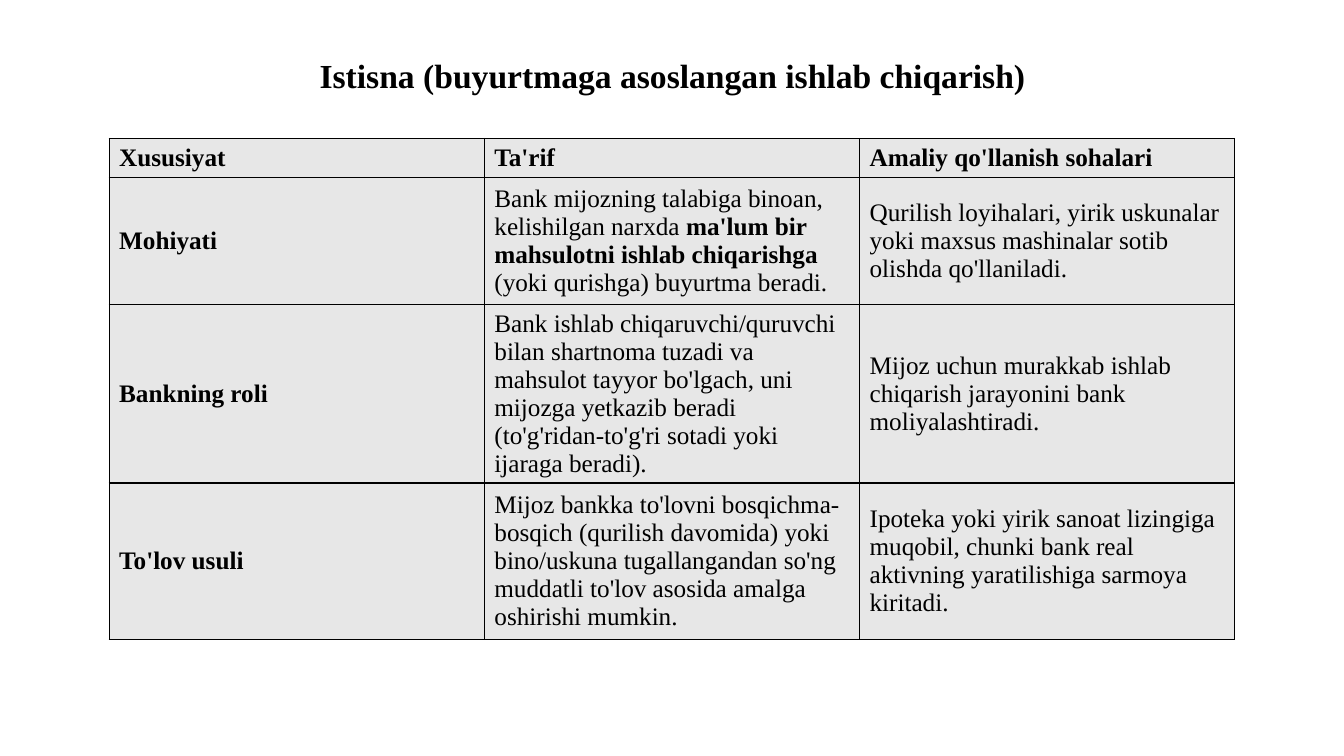
from lxml import etree
from pptx import Presentation
from pptx import util as u
from pptx.dml.color import RGBColor
from pptx.enum import text
from pptx.oxml import ns

COLOURS = {"ink": "000000", "cell": "E7E7E7"}
FONT = "Times New Roman"
COLUMN_SHARES = (1, 1, 1)
ROW_HEIGHTS = (0.99, 3.2, 4.49, 3.94)
FEATURES = (
    ("Xususiyat", "Ta'rif", "Amaliy qo'llanish sohalari"),
    (
        "Mohiyati",
        (
            ("Bank mijozning talabiga binoan, kelishilgan narxda ", False),
            ("ma'lum bir mahsulotni ishlab chiqarishga", True),
            (" (yoki qurishga) buyurtma beradi.", False),
        ),
        "Qurilish loyihalari, yirik uskunalar yoki maxsus mashinalar sotib olishda qo'llaniladi.",
    ),
    (
        "Bankning roli",
        "Bank ishlab chiqaruvchi/quruvchi bilan shartnoma tuzadi va mahsulot tayyor bo'lgach, "
        "uni mijozga yetkazib beradi (to'g'ridan-to'g'ri sotadi yoki ijaraga beradi).",
        "Mijoz uchun murakkab ishlab chiqarish jarayonini bank moliyalashtiradi.",
    ),
    (
        "To'lov usuli",
        "Mijoz bankka to'lovni bosqichma-bosqich (qurilish davomida) yoki bino/uskuna "
        "tugallangandan so'ng muddatli to'lov asosida amalga oshirishi mumkin.",
        "Ipoteka yoki yirik sanoat lizingiga muqobil, chunki bank real aktivning "
        "yaratilishiga sarmoya kiritadi.",
    ),
)


def write(paragraph, wording, size=18, bold=False, align=text.PP_ALIGN.LEFT):
    paragraph.alignment = align
    pieces = ((wording, bold),) if isinstance(wording, str) else wording
    for words, strong in pieces:
        run = paragraph.add_run()
        run.text = words
        run.font.name = FONT
        run.font.size = u.Pt(size)
        run.font.bold = strong
        run.font.color.rgb = RGBColor.from_string(COLOURS["ink"])


def outline(cell):
    properties = cell._tc.get_or_add_tcPr()
    for position, side in enumerate(("lnL", "lnR", "lnT", "lnB")):
        border = etree.Element(ns.qn(f"a:{side}"), w=str(u.Pt(1)))
        fill = etree.SubElement(border, ns.qn("a:solidFill"))
        etree.SubElement(fill, ns.qn("a:srgbClr"), val=COLOURS["ink"])
        properties.insert(position, border)


def place_title(slide, left, top, width, height):
    title = slide.shapes.title
    title.left, title.top, title.width, title.height = map(u.Cm, (left, top, width, height))
    frame = title.text_frame
    frame.margin_top = frame.margin_bottom = 0
    frame.vertical_anchor = text.MSO_ANCHOR.MIDDLE
    frame.word_wrap = False
    frame.auto_size = text.MSO_AUTO_SIZE.NONE
    heading = frame.paragraphs[0]
    heading.line_spacing = 1.0
    write(heading, "Istisna (buyurtmaga asoslangan ishlab chiqarish)",
          size=24, bold=True, align=text.PP_ALIGN.CENTER)


def place_features(slide, left, top, width, height):
    features = slide.shapes.add_table(
        len(FEATURES), len(COLUMN_SHARES), *map(u.Cm, (left, top, width, height))
    ).table
    features.horz_banding = False
    for column, share in zip(features.columns, COLUMN_SHARES):
        column.width = u.Cm(width * share / sum(COLUMN_SHARES))
    for row, row_height in zip(features.rows, ROW_HEIGHTS):
        row.height = u.Cm(height * row_height / sum(ROW_HEIGHTS))
    for r, wordings in enumerate(FEATURES):
        for c, wording in enumerate(wordings):
            cell = features.cell(r, c)
            cell.vertical_anchor = text.MSO_ANCHOR.MIDDLE
            cell.fill.solid()
            cell.fill.fore_color.rgb = RGBColor.from_string(COLOURS["cell"])
            outline(cell)
            write(cell.text_frame.paragraphs[0], wording, bold=r == 0 or c == 0)


def main():
    deck = Presentation()
    deck.slide_width, deck.slide_height = u.Cm(33.87), u.Cm(19.05)
    slide = deck.slides.add_slide(deck.slide_layouts[5])
    place_title(slide, 7.7, 1.37, 18.49, 1.02)
    place_features(slide, 2.75, 3.49, 28.37, sum(ROW_HEIGHTS))
    deck.save("out.pptx")


if __name__ == "__main__":
    main()
